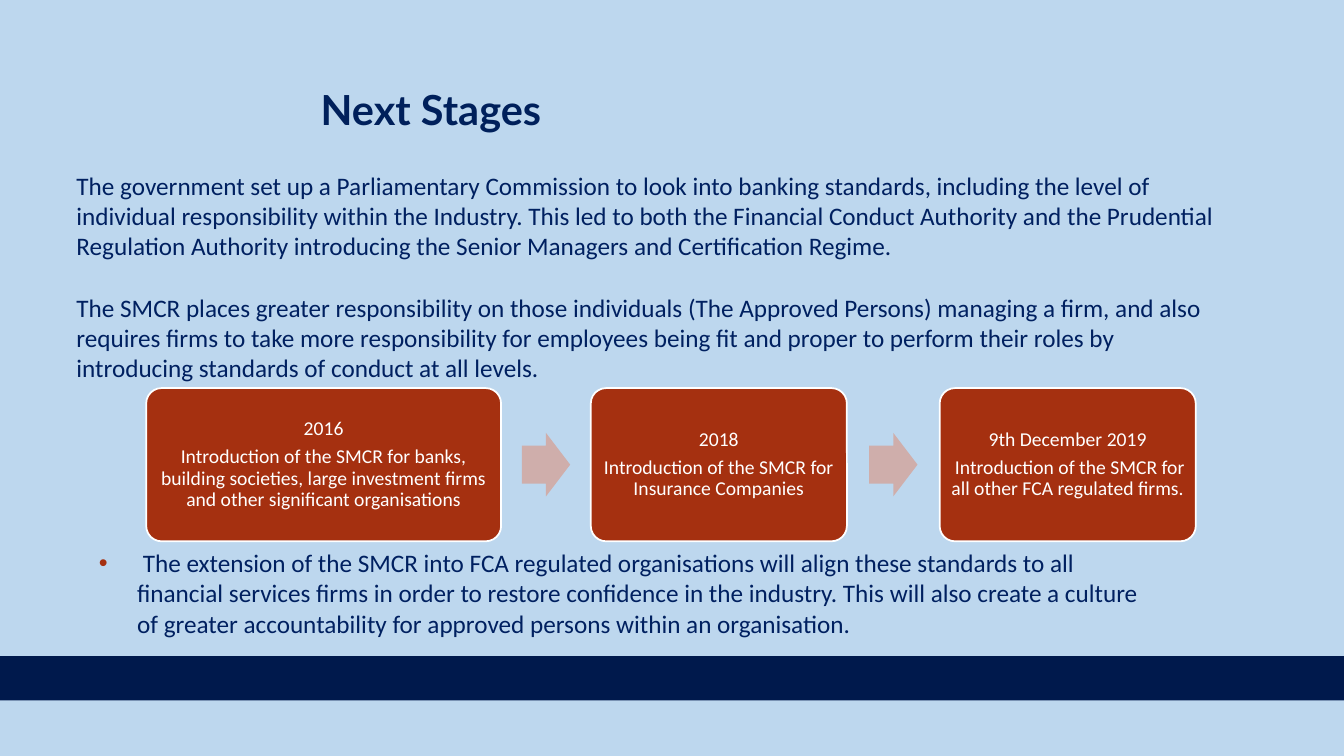
from lxml import etree
from pptx import Presentation
from pptx.dml.color import RGBColor
from pptx.enum import shapes, text
from pptx.oxml.ns import qn
from pptx.util import Inches, Pt

COLORS = {"sky": "BDD7EE", "band": "00194C", "title": "00205B", "body": "002060",
          "card": "A53010", "arrow": "CFAEAB", "white": "FFFFFF"}

TITLE = "Next Stages"
INTRO = [
    "The government set up a Parliamentary Commission\u00a0to look into banking standards, including "
    "the level of individual responsibility within the Industry. This led to both the Financial "
    "Conduct Authority and the Prudential Regulation Authority introducing the Senior Managers and "
    "Certification Regime.",
    "The SMCR places greater responsibility on those individuals (The Approved Persons) managing a "
    "firm, and also requires firms to take more responsibility for employees being fit and proper to "
    "perform their roles by introducing standards of conduct at all levels.",
]
# left, width, date, description
STAGES = [
    (1.45, 3.52, "2016", "Introduction of the SMCR for banks, building societies, large investment "
                         "firms and other significant organisations"),
    (5.86, 2.54, "2018", "Introduction of the SMCR for Insurance Companies"),
    (9.32, 2.54, "9th\u00a0December\u00a02019",
     "\u00a0Introduction of the SMCR for all other FCA regulated firms."),
]
CLOSING = (" The extension of the SMCR into FCA regulated organisations will align these standards to "
           "all financial services firms in order to restore confidence in the industry. This will "
           "also create a culture of greater accountability for approved persons within an "
           "organisation.")

CARD_TOP, CARD_HEIGHT = 3.85, 1.52
ARROW_WIDTH, ARROW_HEIGHT = 0.48, 0.63


def rgb(name):
    return RGBColor.from_string(COLORS[name])


def place(box, left, top, width, height):
    box.left, box.top = Inches(left), Inches(top)
    box.width, box.height = Inches(width), Inches(height)


def write(box, lines, size=18, color="body", font="Calibri", bold=False, gap=0, spacing=1.0,
          align=text.PP_ALIGN.LEFT, anchor=text.MSO_ANCHOR.TOP, inset=None, bullet=None):
    frame = box.text_frame
    frame.word_wrap = True
    frame.auto_size = text.MSO_AUTO_SIZE.NONE
    frame.vertical_anchor = anchor
    if inset is not None:
        frame.margin_left = frame.margin_right = Inches(inset)
        frame.margin_top = frame.margin_bottom = Inches(inset)
    for index, line in enumerate(lines):
        para = frame.add_paragraph() if index else frame.paragraphs[0]
        if bullet:
            add_bullet(para, bullet)
        para.alignment = align
        para.line_spacing = spacing
        para.space_before = Pt(gap if index else 0)
        span = para.add_run()
        span.text = line
        span.font.size, span.font.name, span.font.bold = Pt(size), font, bold
        span.font.color.rgb = rgb(color)


def add_bullet(para, color, indent=0.38):
    properties = para._p.get_or_add_pPr()
    properties.set("marL", str(Inches(indent)))
    properties.set("indent", str(-Inches(indent)))
    tint = etree.SubElement(properties, qn("a:buClr"))
    etree.SubElement(tint, qn("a:srgbClr"), val=COLORS[color])
    etree.SubElement(properties, qn("a:buFont"), typeface="Arial")
    etree.SubElement(properties, qn("a:buChar"), char="•")


def add_block(page, kind, left, top, width, height, fill, line=None, adjust=()):
    block = page.shapes.add_shape(kind, Inches(left), Inches(top), Inches(width), Inches(height))
    block.shadow.inherit = False
    block.fill.solid()
    block.fill.fore_color.rgb = rgb(fill)
    if line:
        block.line.color.rgb = rgb(line)
        block.line.width = Pt(1.25)
    else:
        block.line.fill.background()
    for index, value in enumerate(adjust):
        block.adjustments[index] = value
    return block


def add_stages(page):
    middle = CARD_TOP + CARD_HEIGHT / 2
    previous_right = None
    for left, width, date, description in STAGES:
        if previous_right is not None:
            arrow_left = (previous_right + left - ARROW_WIDTH) / 2
            add_block(page, shapes.MSO_SHAPE.RIGHT_ARROW, arrow_left, middle - ARROW_HEIGHT / 2,
                      ARROW_WIDTH, ARROW_HEIGHT, "arrow", adjust=(0.6, 0.5))
        card = add_block(page, shapes.MSO_SHAPE.ROUNDED_RECTANGLE, left, CARD_TOP, width,
                         CARD_HEIGHT, "card", line="white", adjust=(0.1,))
        write(card, [date, description], size=14, color="white", gap=5, spacing=0.9,
              align=text.PP_ALIGN.CENTER, anchor=text.MSO_ANCHOR.MIDDLE, inset=0.06)
        previous_right = left + width


def main():
    deck = Presentation()
    deck.slide_width, deck.slide_height = Inches(13.33), Inches(7.5)
    page = deck.slides.add_slide(deck.slide_layouts[1])
    page.background.fill.solid()
    page.background.fill.fore_color.rgb = rgb("sky")

    add_block(page, shapes.MSO_SHAPE.RECTANGLE, 0, 6.51, 13.33, 0.44, "band")

    title, closing = page.placeholders
    place(title, 3.08, 0.92, 9.29, 0.47)
    write(title, [TITLE], size=29.6, color="title", font="Lato", bold=True, spacing=0.7)

    intro = page.shapes.add_textbox(0, 0, 0, 0)
    place(intro, 0.66, 1.64, 11.71, 2.22)
    write(intro, INTRO, gap=22)

    add_stages(page)

    place(closing, 0.88, 5.38, 10.68, 1.01)
    write(closing, [CLOSING], bullet="card")
    deck.save("out.pptx")


if __name__ == "__main__":
    main()
